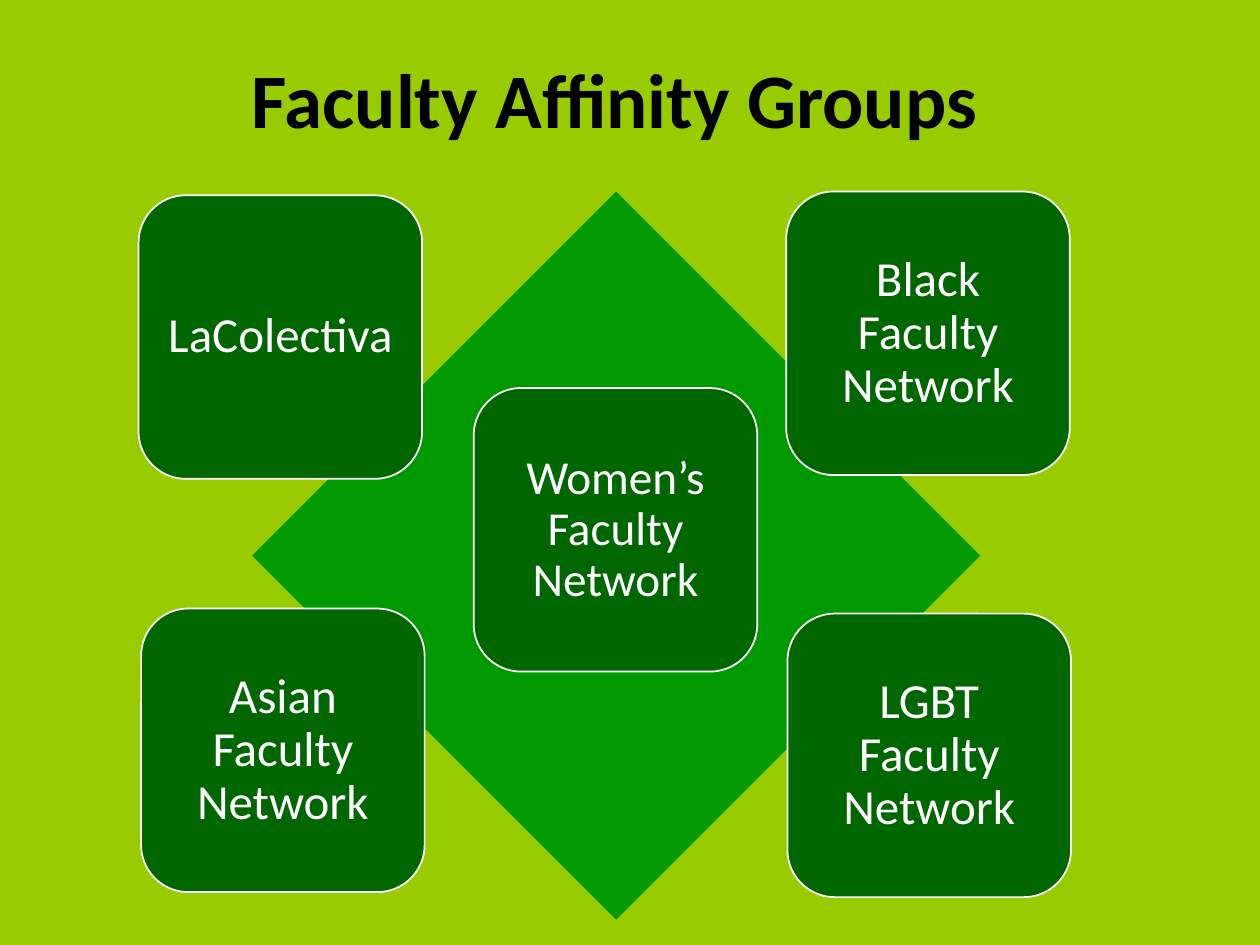
from pptx import Presentation
from pptx.dml.color import RGBColor
from pptx.enum.shapes import MSO_SHAPE
from pptx.enum.text import MSO_ANCHOR, PP_ALIGN
from pptx.util import Inches, Pt

SIDE = 2.25
GROUPS = [
    ("LaColectiva", 1.1, 1.55, 28),
    ("Black Faculty Network", 6.24, 1.52, 28),
    ("Asian Faculty Network", 1.12, 4.83, 28),
    ("LGBT Faculty Network", 6.25, 4.87, 28),
    ("Women’s Faculty Network", 3.76, 3.08, 27),
]


def paint(fill, color):
    fill.solid()
    fill.fore_color.rgb = RGBColor.from_string(color)


def write(frame, text, size, color, bold=False, inset=0.1):
    frame.word_wrap = True
    frame.vertical_anchor = MSO_ANCHOR.MIDDLE
    frame.margin_left = frame.margin_right = Inches(inset)
    frame.margin_top = frame.margin_bottom = Inches(inset)
    para = frame.paragraphs[0]
    para.alignment = PP_ALIGN.CENTER
    para.line_spacing = 0.9
    run = para.add_run()
    run.text = text
    run.font.name = "Calibri"
    run.font.size = Pt(size)
    run.font.bold = bold
    run.font.color.rgb = RGBColor.from_string(color)


def add_form(slide, kind, box, color, line=None):
    form = slide.shapes.add_shape(kind, *map(Inches, box))
    form.shadow.inherit = False
    paint(form.fill, color)
    if line:
        paint(form.line.fill, line)
        form.line.width = Pt(1)
    else:
        form.line.fill.background()
    return form


def add_title(slide, box):
    title = slide.shapes.add_textbox(*map(Inches, box))
    write(title.text_frame, "Faculty Affinity Groups", size=44, color="000000", bold=True)


def add_matrix(slide, box):
    left, top = box[:2]
    add_form(slide, MSO_SHAPE.DIAMOND, box, "009900")
    for name, x, y, size in GROUPS:
        spot = (left + x - 2, top + y - 1.52, SIDE, SIDE)
        card = add_form(slide, MSO_SHAPE.ROUNDED_RECTANGLE, spot, "006600", line="FFFFFF")
        write(card.text_frame, name, size=size, color="FFFFFF", inset=0.12)


def main():
    deck = Presentation()
    deck.slide_width, deck.slide_height = Inches(10), Inches(7.5)
    slide = deck.slides.add_slide(deck.slide_layouts[6])
    paint(slide.background.fill, "99CC00")
    add_title(slide, (0.57, 0.1, 8.62, 1.45))
    add_matrix(slide, (2, 1.52, 5.78, 5.78))
    deck.save("out.pptx")


if __name__ == "__main__":
    main()
